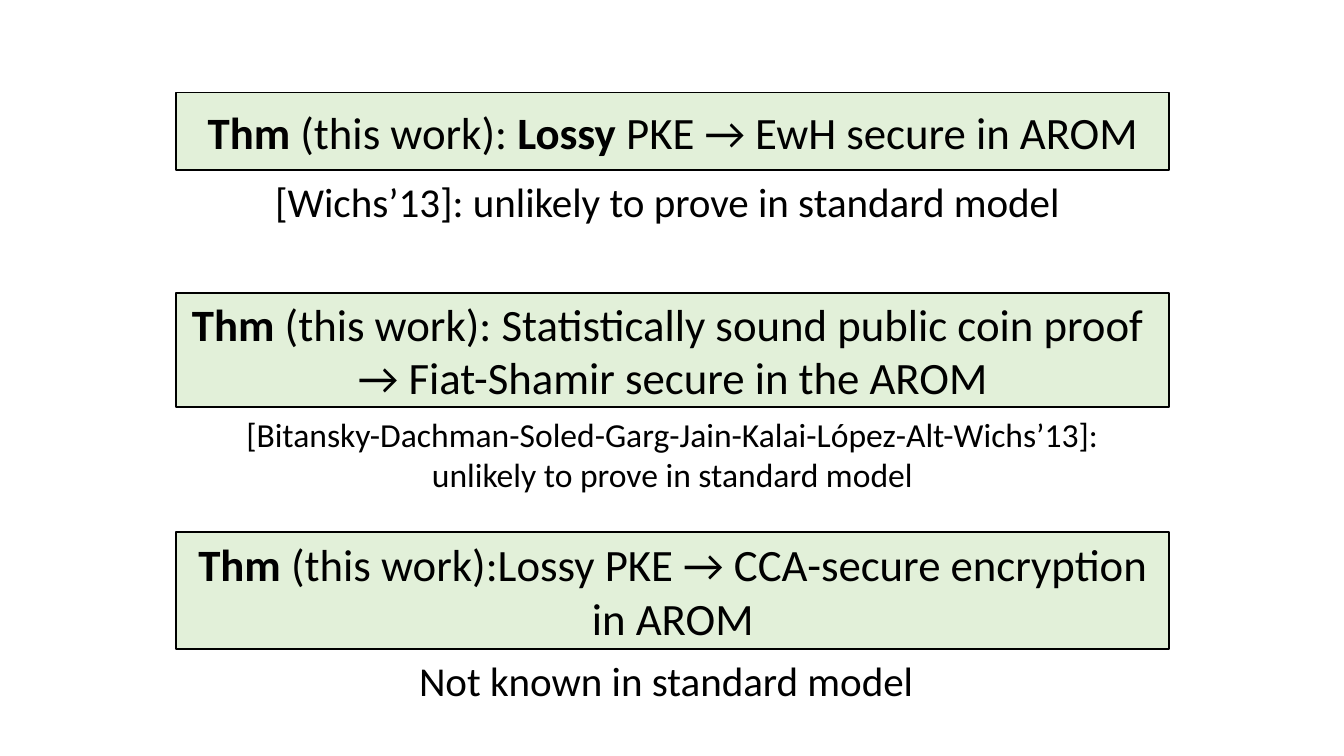
from pptx import Presentation
from pptx import util as u
from pptx.dml import color
from pptx.enum import shapes, text

BLACK = "000000"
PALE_GREEN = "E2F0D9"
THEOREM_LEFT, THEOREM_WIDTH = 3.33, 18.77
CENTER, LEFT = text.PP_ALIGN.CENTER, text.PP_ALIGN.LEFT


def rgb(value):
    return color.RGBColor.from_string(value)


class SlideBuilder:
    """Holds the style and the current slide."""

    font = "Calibri"
    theorem_size = 24

    def __init__(self, slide):
        self.slide = slide

    def add_text(self, shape, paragraphs, size, alignment):
        """Each paragraph is a list of (words, bold) runs."""
        frame = shape.text_frame
        frame.word_wrap = True
        for index, runs in enumerate(paragraphs):
            paragraph = frame.add_paragraph() if index else frame.paragraphs[0]
            paragraph.alignment = alignment
            for words, bold in runs:
                run = paragraph.add_run()
                run.text = words
                run.font.name = self.font
                run.font.size = u.Pt(size)
                run.font.bold = bold
                run.font.color.rgb = rgb(BLACK)

    def theorem(self, top, height, paragraphs):
        shape = self.slide.shapes.add_shape(
            shapes.MSO_SHAPE.RECTANGLE,
            u.Cm(THEOREM_LEFT), u.Cm(top), u.Cm(THEOREM_WIDTH), u.Cm(height))
        shape.shadow.inherit = False
        shape.fill.solid()
        shape.fill.fore_color.rgb = rgb(PALE_GREEN)
        shape.line.color.rgb = rgb(BLACK)
        shape.line.width = u.Pt(1)
        shape.text_frame.vertical_anchor = text.MSO_ANCHOR.MIDDLE
        self.add_text(shape, paragraphs, self.theorem_size, CENTER)

    def remark(self, left, top, width, height, words, size, alignment):
        shape = self.slide.shapes.add_textbox(
            u.Cm(left), u.Cm(top), u.Cm(width), u.Cm(height))
        self.add_text(shape, [[(words, False)]], size, alignment)


def main():
    presentation = Presentation()
    presentation.slide_width = u.Cm(25.4)
    presentation.slide_height = u.Cm(14.29)
    blank_layout = presentation.slide_layouts[6]
    builder = SlideBuilder(presentation.slides.add_slide(blank_layout))

    # Theorem: top, height, paragraphs; remark: left, width, height, words, size, alignment
    thm = ("Thm", True)
    results = [
        ((1.75, 1.47, [[thm, (" (this work): ", False), ("Lossy", True),
                        (" PKE → EwH secure in AROM", False)]]),
         (4.95, 15.49, 1.19,
          "[Wichs’13]: unlikely to prove in standard model", 22, LEFT)),
        ((5.54, 2.16, [[thm, (" (this work): Statistically sound public coin proof ", False)],
                       [("→ Fiat-Shamir secure in the AROM", False)]]),
         (4.29, 16.84, 1.8,
          "[Bitansky-Dachman-Soled-Garg-Jain-Kalai-López-Alt-Wichs’13]: "
          "unlikely to prove in standard model", 18, CENTER)),
        ((10.06, 2.21, [[thm, (" (this work):Lossy PKE → CCA-secure encryption in AROM",
                               False)]]),
         (7.67, 10.03, 1.19, "Not known in standard model", 22, LEFT)),
    ]

    # Each remark sits directly under its theorem
    for (top, height, paragraphs), (left, *remark) in results:
        builder.theorem(top, height, paragraphs)
        builder.remark(left, top + height, *remark)

    presentation.save("out.pptx")


if __name__ == "__main__":
    main()
